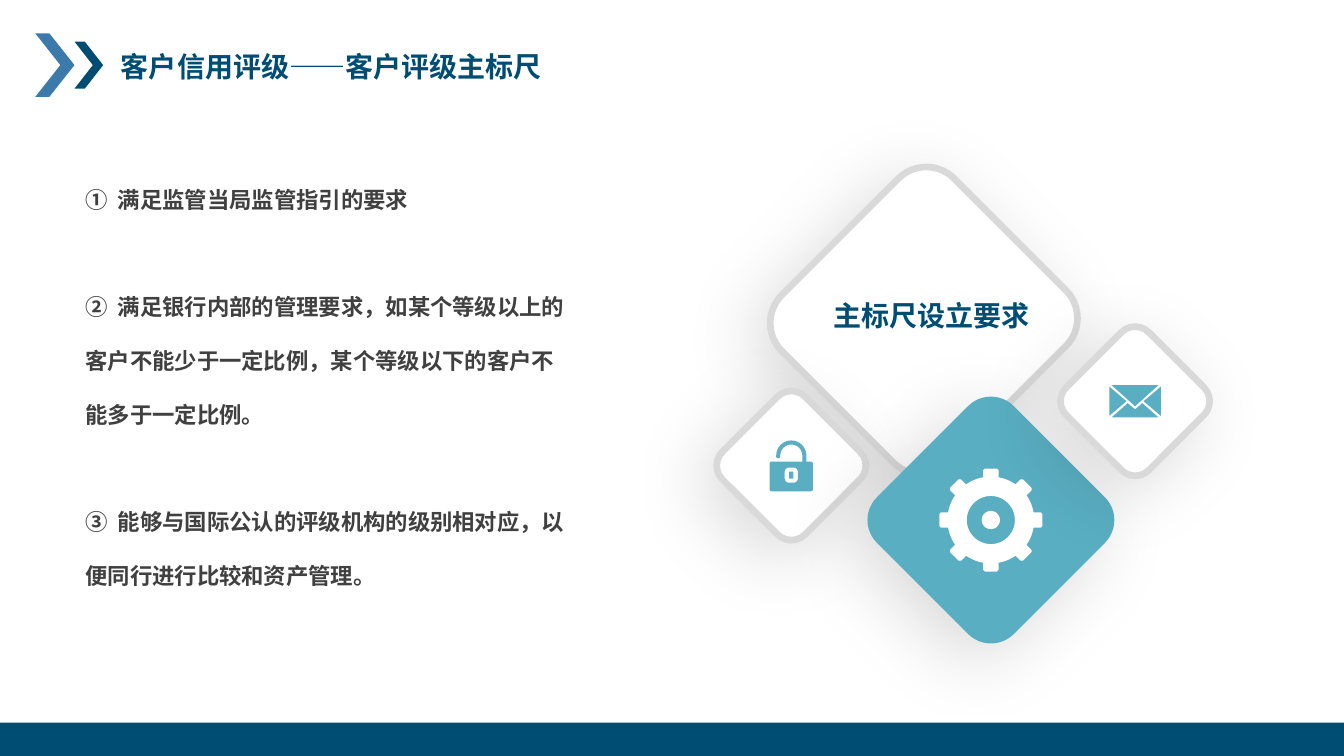
from math import asin, cos, degrees, radians, sin

from lxml.etree import SubElement
from pptx import Presentation
from pptx.dml.color import RGBColor
from pptx.enum.shapes import MSO_SHAPE as Shape
from pptx.enum.text import MSO_ANCHOR as Anchor, MSO_AUTO_SIZE as AutoSize
from pptx.oxml.ns import qn
from pptx.util import Pt

# Content
TITLE = "客户信用评级——客户评级主标尺"
LABEL = "主标尺设立要求"
REQUIREMENTS = [
    "①  满足监管当局监管指引的要求",
    "②  满足银行内部的管理要求，如某个等级以上的客户不能少于一定比例，某个等级以下的客户不能多于一定比例。",
    "③  能够与国际公认的评级机构的级别相对应，以便同行进行比较和资产管理。",
]

FONT = "Noto Sans CJK SC"
NAVY, BLUE, TEAL = "004D73", "3C7AAB", "59AEC1"
WHITE, RING, GREY = "FFFFFF", "D9D9D9", "404040"

# left, top, width, height, colour
CHEVRONS = [(25.2, 23.8, 28, 45.4, BLUE), (53.3, 29.8, 20.4, 33.5, NAVY)]

# centre x, centre y, width, height, fill, ring colour
LOCK_CENTRE, GEAR_CENTRE, MAIL_CENTRE = (565.2, 332.6), (707.8, 371.5), (810.8, 286.6)
DIAMONDS = [
    (659.9, 229, 169.2, 174.2, WHITE, RING),
    (*LOCK_CENTRE, 83.5, 83.5, WHITE, RING),
    (*GEAR_CENTRE, 138.2, 138.2, TEAL, None),
    (*MAIL_CENTRE, 83.5, 83.5, WHITE, RING),
]

presentation = Presentation()
presentation.slide_width, presentation.slide_height = Pt(960), Pt(540)
slide = presentation.slides.add_slide(presentation.slide_layouts[5])


def colour(value):
    return RGBColor.from_string(value)


def paint(shape, fill, ring=None):
    shape.shadow.inherit = False
    shape.fill.solid()
    shape.fill.fore_color.rgb = colour(fill)
    if ring:
        shape.line.color.rgb = colour(ring)
        shape.line.width = Pt(4.75)
    else:
        shape.line.fill.background()


def add_preset(kind, left, top, width, height, fill, ring=None):
    shape = slide.shapes.add_shape(kind, Pt(left), Pt(top), Pt(width), Pt(height))
    paint(shape, fill, ring)
    return shape


def add_soft_shadow(shape):
    effects = shape._element.spPr.find(qn("a:effectLst"))
    shadow = SubElement(effects, qn("a:outerShdw"), blurRad=str(Pt(55)),
                        dist=str(Pt(15)), dir=str(135 * 60000), rotWithShape="0")
    black = SubElement(shadow, qn("a:srgbClr"), val="000000")
    SubElement(black, qn("a:alpha"), val="15000")


def write(text, left, top, width, height, shape=None, size=20, ink=NAVY,
          wrap=True, line_spacing=1.0, gap=0):
    """Put text, a string or a list of paragraphs, in a new or given shape."""
    shape = shape or slide.shapes.add_textbox(0, 0, 0, 0)
    shape.left, shape.top, shape.width, shape.height = map(Pt, (left, top, width, height))
    frame = shape.text_frame
    frame.word_wrap = wrap
    frame.auto_size = AutoSize.NONE
    frame.vertical_anchor = Anchor.TOP
    lines = [text] if isinstance(text, str) else text
    for index, line in enumerate(lines):
        paragraph = frame.add_paragraph() if index else frame.paragraphs[0]
        paragraph.alignment = 1
        paragraph.line_spacing = line_spacing
        paragraph.space_before = Pt(gap if index else 0)
        run = paragraph.add_run()
        run.text = line
        run.font.name, run.font.size, run.font.bold = FONT, Pt(size), True
        run.font.color.rgb = colour(ink)
        SubElement(run._r.get_or_add_rPr(), qn("a:ea"), typeface=FONT)


# Outlines are lists of points around an icon's centre
def arc(x, y, radius, start, end, steps=12):
    angles = [radians(start + (end - start) * step / steps) for step in range(steps + 1)]
    return [(x + radius * cos(angle), y + radius * sin(angle)) for angle in angles]


def rounded(y, half_width, half_height, radius):
    corners = [(1, 1), (-1, 1), (-1, -1), (1, -1)]
    return [point for turn, (side, end) in enumerate(corners)
            for point in arc(side * (half_width - radius), y + end * (half_height - radius),
                             radius, 90 * turn, 90 * turn + 90, 6)]


def mirrored(outline):
    return [(-x, y) for x, y in outline]


def lock():
    shackle_y, outer, inner = -7.2, 10.8, 7.9
    end = (outer - inner) / 2
    body_top, body_bottom, half, corner = -2.9, 18.3, 15.4, 1.5
    outline = [
        *arc(0, shackle_y, inner, 0, -180),
        *arc(-inner - end, shackle_y + 0.5, end, 0, 180),
        *arc(0, shackle_y, outer, -180, 0),
        (outer, body_top),
        *arc(half - corner, body_top + corner, corner, -90, 0),
        *arc(half - corner, body_bottom - corner, corner, 0, 90),
        *arc(corner - half, body_bottom - corner, corner, 90, 180),
        *arc(corner - half, body_top + corner, corner, 180, 270),
        (inner, body_top),
    ]
    return [outline, rounded(6.8, 4.7, 5.4, 2.9), rounded(6.8, 1.5, 2.5, 0.5)]


def mail():
    side = [(18.4, -10.4), (18.4, 10.4), (6.1, 0)]
    top = [(-16.7, -11.5), (16.7, -11.5), (0, 3.6)]
    bottom = [(-5.2, 1.4), (0, 5.8), (5.2, 1.4), (16.7, 11.5), (-16.7, 11.5)]
    return [top, bottom, side, mirrored(side)]


def gear(teeth=8, body=31, tip=36.8, half=5.5, bevel=1.2):
    step, base = 360 / teeth, degrees(asin(half / body))
    tooth = [(tip - bevel, -half), (tip, bevel - half), (tip, half - bevel), (tip - bevel, half)]
    outline = []
    for index in range(teeth):
        angle = index * step
        c, s = cos(radians(angle)), sin(radians(angle))
        outline += [(x * c - y * s, x * s + y * c) for x, y in tooth]
        outline += arc(0, 0, body, angle + base, angle + step - base)
    return [outline, arc(0, 0, 17.2, 0, 360, 60), arc(0, 0, 6.5, 0, 360, 36)]


def add_icon(outlines, centre, fill):
    placed = [[(Pt(centre[0] + x), Pt(centre[1] + y)) for x, y in outline]
              for outline in outlines]
    builder = slide.shapes.build_freeform(*placed[0][0])
    for index, points in enumerate(placed):
        if index:
            builder.move_to(*points[0])
        builder.add_line_segments(points[1:], close=True)
    paint(builder.convert_to_shape(), fill)


# Header and footer
for *box, fill in CHEVRONS:
    chevron = add_preset(Shape.CHEVRON, *box, fill)
    chevron.adjustments[0] = 0.64
add_preset(Shape.RECTANGLE, 0, 516.2, 960, 23.8, NAVY)
write(TITLE, 79.2, 31.7, 416.9, 31.7, shape=slide.shapes.title)

# Diamonds
for x, y, width, height, fill, ring in DIAMONDS:
    diamond = add_preset(Shape.ROUNDED_RECTANGLE, x - width / 2, y - height / 2,
                         width, height, fill, ring)
    diamond.rotation = 45
    add_soft_shadow(diamond)

# Icons
add_icon(lock(), LOCK_CENTRE, TEAL)
add_icon(mail(), MAIL_CENTRE, TEAL)
add_icon(gear(), GEAR_CENTRE, WHITE)

# Text
write(REQUIREMENTS, 54, 110.2, 364.3, 337, size=16, ink=GREY, line_spacing=2.0, gap=38.3)
write(LABEL, 588.2, 209.5, 156.2, 31.7, wrap=False)

presentation.save("out.pptx")
